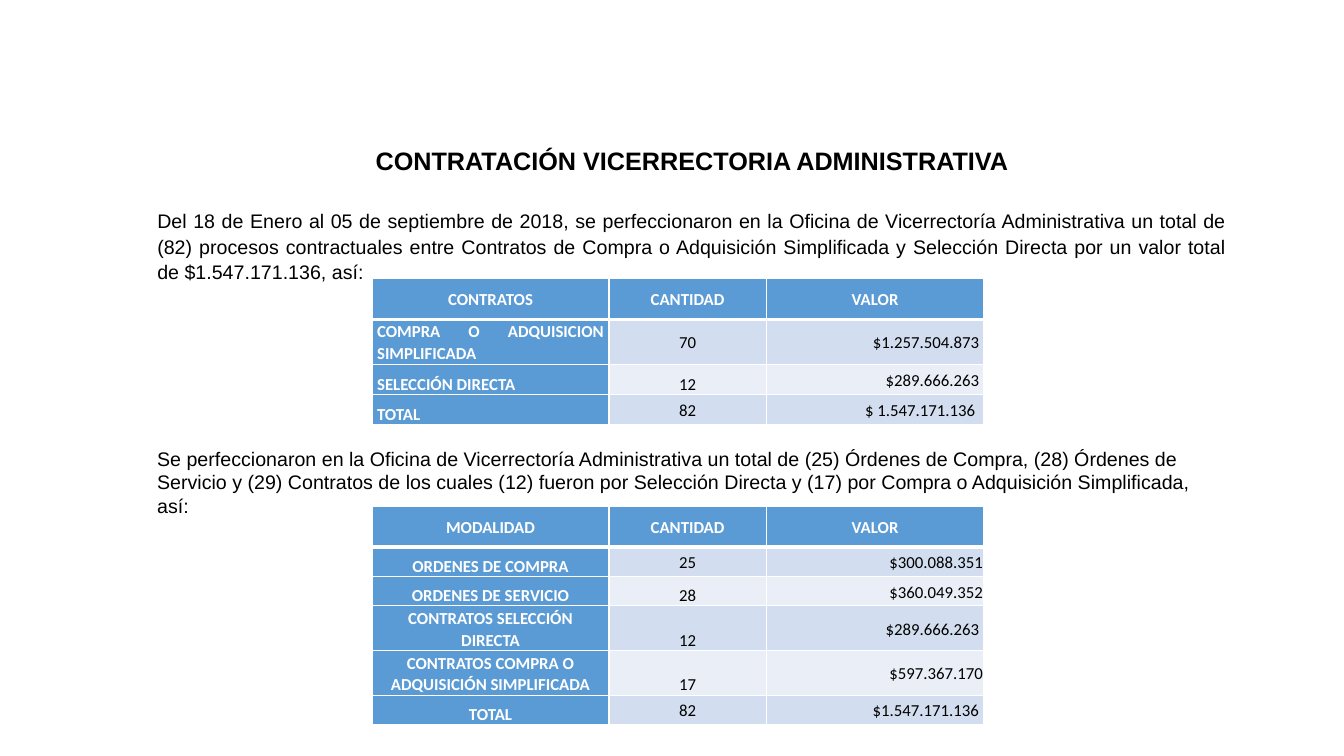
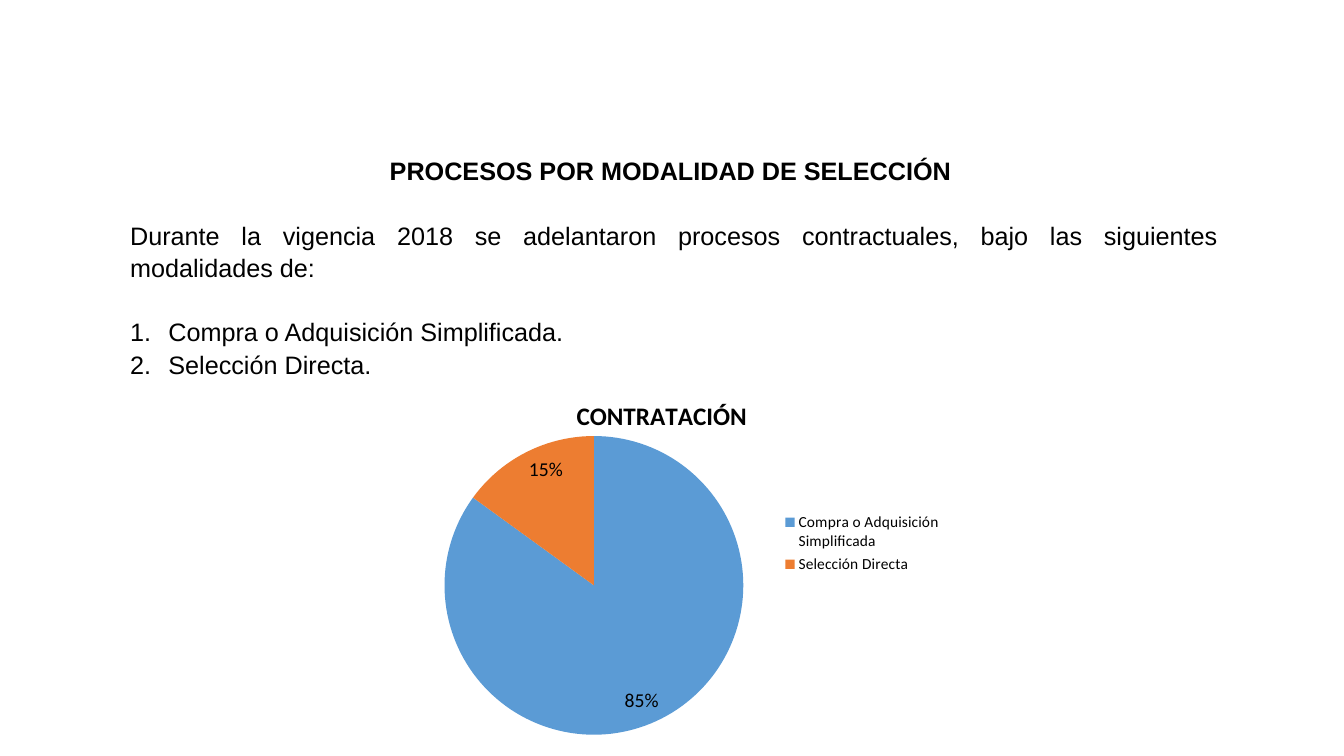
import dataclasses
import lxml.etree
import pptx
import pptx.chart.data
import pptx.dml.color
import pptx.enum.chart
import pptx.enum.text
import pptx.oxml
import pptx.oxml.ns
import pptx.util

Inches = pptx.util.Inches
Pt = pptx.util.Pt
RGB = pptx.dml.color.RGBColor.from_string
ALIGN = pptx.enum.text.PP_ALIGN
ANCHOR = pptx.enum.text.MSO_ANCHOR
qn = pptx.oxml.ns.qn


@dataclasses.dataclass(frozen=True)
class Theme:
    text_font: str = "Arial"
    data_font: str = "Calibri"
    black: str = "000000"
    white: str = "FFFFFF"
    blue: str = "5B9BD5"
    orange: str = "ED7D31"
    bands: tuple = ("D2DEEF", "EAEFF7")
    title: int = 18
    body: int = 14
    cell: int = 12
    legend: int = 11
    line_spacing: float = 1.07


THEME = Theme()

CONTRACTS = [
    ("CONTRATOS", "CANTIDAD", "VALOR"),
    ("COMPRA O ADQUISICION SIMPLIFICADA", "70", "$1.257.504.873 "),
    ("SELECCIÓN DIRECTA", "12", "$289.666.263 "),
    ("TOTAL", "82", "$ 1.547.171.136 "),
]
MODALITIES = [
    ("MODALIDAD", "CANTIDAD", "VALOR"),
    ("ORDENES DE COMPRA", "25", "$300.088.351"),
    ("ORDENES DE SERVICIO", "28", "$360.049.352"),
    ("CONTRATOS SELECCIÓN DIRECTA", "12", "$289.666.263 "),
    ("CONTRATOS COMPRA O ADQUISICIÓN SIMPLIFICADA", "17", "$597.367.170"),
    ("TOTAL", "82", "$1.547.171.136"),
]


def sub(parent, tag, **attrs):
    return lxml.etree.SubElement(parent, qn(tag), {k: str(v) for k, v in attrs.items()})


def style_runs(p, size, font=THEME.text_font, color=THEME.black, bold=False):
    for r in p.runs:
        r.font.size, r.font.name, r.font.bold = Pt(size), font, bold
        r.font.color.rgb = RGB(color)


def place(sp, box):
    sp.left, sp.top, sp.width, sp.height = (Inches(v) for v in box)
    tf = sp.text_frame
    tf.word_wrap = True
    tf.auto_size = pptx.enum.text.MSO_AUTO_SIZE.NONE
    tf.vertical_anchor = ANCHOR.TOP
    return tf


def set_title(slide, text, box):
    p = place(slide.shapes.title, box).paragraphs[0]
    p.text = text
    p.alignment = ALIGN.CENTER
    p.line_spacing = THEME.line_spacing
    style_runs(p, THEME.title, bold=True)


def set_body(slide, intro, size, box, items=()):
    """Fill the body with a justified paragraph and an optional numbered list."""
    tf = place(slide.placeholders[1], box)
    tf.text = "\n".join((intro, *items))
    for i, p in enumerate(tf.paragraphs):
        pPr = p._p.get_or_add_pPr()
        indent = Inches(0.38) if i else 0
        pPr.set("marL", str(indent))
        pPr.set("indent", str(-indent))
        if i:
            sub(pPr, "a:buFont", typeface="+mj-lt")
            sub(pPr, "a:buAutoNum", type="arabicPeriod")
            sub(sub(pPr, "a:tabLst"), "a:tab", pos=Inches(0.5), algn="l")
        else:
            sub(pPr, "a:buNone")
        p.alignment = ALIGN.LEFT if i else ALIGN.JUSTIFY
        p.line_spacing = THEME.line_spacing
        p.space_before = Pt(23 if i == 1 else 0)
        style_runs(p, size)


def add_note(slide, text, box):
    sp = slide.shapes.add_textbox(0, 0, 0, 0)
    p = place(sp, box).paragraphs[0]
    p.text = text
    style_runs(p, THEME.body)


def set_borders(cell, top, bottom):
    tcPr = cell._tc.get_or_add_tcPr()
    for side, width in zip("LRTB", (1, 1, top, bottom)):
        ln = sub(tcPr, f"a:ln{side}", w=Pt(width))
        sub(sub(ln, "a:solidFill"), "a:srgbClr", val=THEME.white)


def style_cell(cell, row, col, last, label_align):
    header, label = row == 0, col == 0
    set_borders(cell, 3 if row == 1 else 1, 3 if header else 1)
    cell.fill.solid()
    strong = header or label
    cell.fill.fore_color.rgb = RGB(THEME.blue if strong else THEME.bands[(row - 1) % 2])
    side = 0.01 if col == 2 and 0 < row < last else 0.05
    cell.margin_left = cell.margin_right = Inches(side)
    cell.margin_top, cell.margin_bottom = Inches(0.01), 0
    low = not header and (label or (col == 1 and 1 < row < last))
    cell.vertical_anchor = ANCHOR.BOTTOM if low else ANCHOR.MIDDLE
    p = cell.text_frame.paragraphs[0]
    p.alignment = ALIGN.CENTER if header else (label_align, ALIGN.CENTER, ALIGN.RIGHT)[col]
    p.line_spacing = THEME.line_spacing
    style_runs(p, THEME.cell, THEME.data_font,
               THEME.white if strong else THEME.black, strong)


def add_data_table(slide, rows, heights, label_align, left, top):
    widths = (2.35, 1.56, 2.16)
    table = slide.shapes.add_table(len(rows), len(widths), Inches(left), Inches(top),
                                   Inches(sum(widths)), Inches(sum(heights))).table
    table.first_row = table.horz_banding = False
    for column, width in zip(table.columns, widths):
        column.width = Inches(width)
    for r, (values, height) in enumerate(zip(rows, heights)):
        table.rows[r].height = Inches(height)
        for c, text in enumerate(values):
            cell = table.cell(r, c)
            cell.text = text
            style_cell(cell, r, c, len(rows) - 1, label_align)


def set_layout(parent, index, inner=False, **fractions):
    """Fix a chart part at fractions of the chart's size."""
    for old in parent.findall(qn("c:layout")):
        parent.remove(old)
    layout = pptx.oxml.parse_xml(f'<c:layout {pptx.oxml.ns.nsdecls("c")}/>')
    manual = sub(layout, "c:manualLayout")
    if inner:
        sub(manual, "c:layoutTarget", val="inner")
    for axis in "xy":
        sub(manual, f"c:{axis}Mode", val="edge")
    for name, value in fractions.items():
        sub(manual, f"c:{name}", val=value)
    parent.insert(index, layout)


def add_pie(slide, box):
    data = pptx.chart.data.CategoryChartData()
    data.categories = ["Compra o Adquisición Simplificada", "Selección Directa"]
    data.add_series("CONTRATACIÓN", (85, 15))
    chart = slide.shapes.add_chart(pptx.enum.chart.XL_CHART_TYPE.PIE,
                                   *(Inches(v) for v in box), data).chart
    chart.font.name, chart.font.size = THEME.data_font, Pt(THEME.title)
    chart.font.color.rgb = RGB(THEME.black)

    chart.has_title = True
    p = chart.chart_title.text_frame.paragraphs[0]
    p.text = "CONTRATACIÓN"
    style_runs(p, THEME.title, THEME.data_font, bold=True)
    set_layout(chart.chart_title._element, 1, x=0.31, y=0.11)

    chart.has_legend = True
    legend = chart.legend
    legend.position = pptx.enum.chart.XL_LEGEND_POSITION.RIGHT
    legend.include_in_layout = False
    legend.font.size, legend.font.name = Pt(THEME.legend), THEME.data_font
    set_layout(legend._element, 1, x=0.69, y=0.41, w=0.3, h=0.18)

    plot = chart.plots[0]
    plot.vary_by_categories = True
    for i, color in enumerate((THEME.blue, THEME.orange)):
        fill = plot.series[0].points[i].format.fill
        fill.solid()
        fill.fore_color.rgb = RGB(color)
    plot.has_data_labels = True
    labels = plot.data_labels
    labels.show_percentage, labels.show_value = True, False
    labels.number_format, labels.number_format_is_linked = "0%", False
    labels.position = pptx.enum.chart.XL_LABEL_POSITION.INSIDE_END
    labels.font.size, labels.font.name = Pt(THEME.body), THEME.data_font
    set_layout(chart._chartSpace.find(".//" + qn("c:plotArea")), 0, inner=True,
               x=0.02, y=0.22, w=0.66, h=0.78)


def contracts_slide(prs):
    slide = prs.slides.add_slide(prs.slide_layouts[1])
    left, width, table_left = 1.46, 10.81, 3.69
    set_title(slide, "CONTRATACIÓN VICERRECTORIA ADMINISTRATIVA", (left, 1.37, width, 0.45))
    set_body(slide, "Del 18 de Enero al 05 de septiembre de 2018, se perfeccionaron en la "
             "Oficina de Vicerrectoría Administrativa un total de (82) procesos contractuales "
             "entre Contratos de Compra o Adquisición Simplificada y Selección Directa por un "
             "valor total de $1.547.171.136, así:", THEME.body, (left, 2.01, width, 0.87))
    add_data_table(slide, CONTRACTS, (0.41, 0.3, 0.3, 0.3), ALIGN.JUSTIFY, table_left, 2.76)
    add_note(slide, "Se perfeccionaron en la Oficina de Vicerrectoría Administrativa un total "
             "de (25) Órdenes de Compra, (28) Órdenes de Servicio y (29) Contratos de los "
             "cuales (12) fueron por Selección Directa y (17) por Compra o Adquisición "
             "Simplificada, así:", (left, 4.38, width, 0.57))
    add_data_table(slide, MODALITIES, (0.41, 0.29, 0.29, 0.29, 0.42, 0.29), ALIGN.CENTER,
                   table_left, 5.02)


def selection_slide(prs):
    slide = prs.slides.add_slide(prs.slide_layouts[1])
    left, width = 1.19, 10.99
    set_title(slide, "PROCESOS POR MODALIDAD DE SELECCIÓN ", (left, 1.47, width, 0.45))
    set_body(slide, "Durante la vigencia 2018 se adelantaron procesos contractuales, bajo las "
             "siguientes modalidades de:", THEME.title, (left, 2.11, width, 1.73),
             ("Compra o Adquisición Simplificada.", "Selección Directa."))
    add_pie(slide, (3.99, 3.49, 5.43, 3.8))


def main():
    prs = pptx.Presentation()
    prs.slide_width, prs.slide_height = Inches(13.33), Inches(7.5)
    contracts_slide(prs)
    selection_slide(prs)
    prs.save("out.pptx")


if __name__ == "__main__":
    main()
